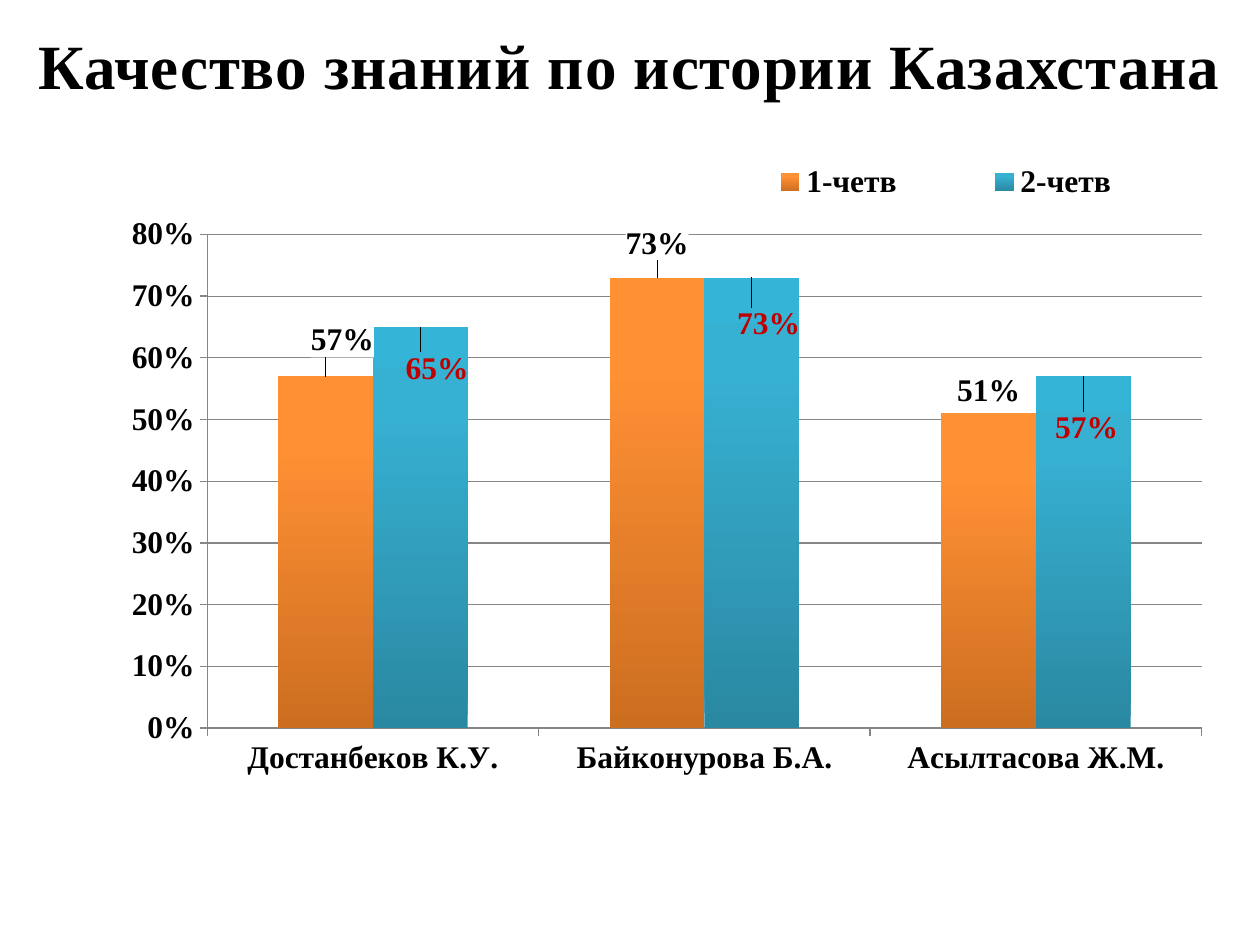
from lxml.etree import fromstring
from pptx import Presentation
from pptx.chart.data import CategoryChartData
from pptx.dml.color import RGBColor
from pptx.enum.chart import (XL_CHART_TYPE as ChartType, XL_LABEL_POSITION as LabelPos,
                             XL_LEGEND_POSITION as LegendPos, XL_TICK_MARK as Tick)
from pptx.enum.text import MSO_ANCHOR, MSO_AUTO_SIZE, PP_ALIGN
from pptx.oxml.ns import nsdecls, qn
from pptx.util import Inches, Pt

TITLE = "Качество знаний по истории Казахстана"
TEACHERS = ["Достанбеков К.У.", "Байконурова Б.А.", "Асылтасова Ж.М."]
# label_shifts: point index -> (x, y) shift as a share of the chart size
QUARTERS = [
    {"name": "1-четв", "values": [0.57, 0.73, 0.51], "label_color": "000000",
     "label_fill": "FFFFFF",
     "gradient": [(0, "CC6E20"), (80, "FF9034"), (100, "FF9136")],
     "label_shifts": {0: (0.015, -0.02), 1: (0, -0.017)}},
    {"name": "2-четв", "values": [0.65, 0.73, 0.57], "label_color": "C00000",
     "label_fill": None,
     "gradient": [(0, "2A88A2"), (80, "37B1D2"), (100, "34B4D6")],
     "label_shifts": {0: (0.015, 0.09), 1: (0.015, 0.097), 2: (0.003, 0.104)}},
]
PLOT_BOX = (0.097, 0.137, 0.886, 0.696)
LEGEND_BOX = (0.53, 0.023, 0.45, 0.08)
THEME = {"font": "Times New Roman", "text": "000000", "grid": "868686",
         "title_size": 36, "chart_size": 18}


def style_font(font, color=THEME["text"], size=THEME["chart_size"]):
    font.name = THEME["font"]
    font.size = Pt(size)
    font.bold = True
    font.color.rgb = RGBColor.from_string(color)


def layout_xml(x, y, w=None, h=None, inner=False):
    """Manual chart layout; without a size it is a shift of a label."""
    target = '<c:layoutTarget val="inner"/>' if inner else ""
    modes = size = ""
    if w is not None:
        modes = '<c:xMode val="edge"/><c:yMode val="edge"/>'
        size = f'<c:w val="{w}"/><c:h val="{h}"/>'
    return fromstring(
        f'<c:layout {nsdecls("c")}><c:manualLayout>{target}{modes}'
        f'<c:x val="{x}"/><c:y val="{y}"/>{size}</c:manualLayout></c:layout>')


def set_gradient(fill_format, stops):
    fill_format.gradient()
    fill_format.gradient_angle = 90
    stop_list = fill_format._fill._gradFill.find(qn("a:gsLst"))
    for old_stop in list(stop_list):
        stop_list.remove(old_stop)
    for percent, color in stops:
        stop_list.append(fromstring(
            f'<a:gs {nsdecls("a")} pos="{percent * 1000}">'
            f'<a:srgbClr val="{color}"/></a:gs>'))


def style_labels(series, quarter):
    labels = series.data_labels
    labels.show_value = True
    labels.number_format = "0%"
    labels.number_format_is_linked = False
    labels.position = LabelPos.OUTSIDE_END
    style_font(labels.font, quarter["label_color"])
    for index, shift in quarter["label_shifts"].items():
        label = series.points[index].data_label
        style_font(label.font, quarter["label_color"])
        label.position = LabelPos.OUTSIDE_END
        label_xml = label._dLbl
        label_xml.find(qn("c:idx")).addnext(layout_xml(*shift))
        if quarter["label_fill"]:
            for old_fill in label_xml.findall(qn("c:spPr")):
                label_xml.remove(old_fill)
            label_xml.find(qn("c:txPr")).addprevious(fromstring(
                f'<c:spPr {nsdecls("c", "a")}><a:solidFill>'
                f'<a:srgbClr val="{quarter["label_fill"]}"/></a:solidFill></c:spPr>'))


def add_title(slide):
    title = slide.shapes.title
    title.left, title.top = Inches(0.16), Inches(0.16)
    title.width, title.height = Inches(9.68), Inches(0.71)
    frame = title.text_frame
    frame.text = TITLE
    frame.word_wrap = False
    frame.auto_size = MSO_AUTO_SIZE.SHAPE_TO_FIT_TEXT
    frame.vertical_anchor = MSO_ANCHOR.TOP
    paragraph = frame.paragraphs[0]
    paragraph.alignment = PP_ALIGN.CENTER
    run = paragraph.runs[0]
    style_font(run.font, size=THEME["title_size"])
    run.font._element.set("spc", "50")


def add_quality_chart(slide):
    data = CategoryChartData(number_format="0%")
    data.categories = TEACHERS
    for quarter in QUARTERS:
        data.add_series(quarter["name"], quarter["values"])
    chart = slide.shapes.add_chart(
        ChartType.COLUMN_CLUSTERED, Inches(0.78), Inches(1.09),
        Inches(8.91), Inches(5.63), data).chart
    chart.has_title = False
    style_font(chart.font)

    plot = chart.plots[0]
    plot.gap_width = 150
    plot.overlap = 0
    plot.vary_by_categories = False
    for series, quarter in zip(plot.series, QUARTERS):
        set_gradient(series.format.fill, quarter["gradient"])
        style_labels(series, quarter)

    grid_color = RGBColor.from_string(THEME["grid"])
    values = chart.value_axis
    values.minimum_scale, values.maximum_scale, values.major_unit = 0, 0.8, 0.1
    values.has_major_gridlines = True
    values.tick_labels.number_format = "0%"
    values.tick_labels.number_format_is_linked = False
    for axis in (values, chart.category_axis):
        axis.major_tick_mark = Tick.OUTSIDE
        style_font(axis.tick_labels.font)
    for line in (values.major_gridlines.format.line, values.format.line,
                 chart.category_axis.format.line):
        line.color.rgb = grid_color
        line.width = Pt(0.75)

    chart.has_legend = True
    legend = chart.legend
    legend.position = LegendPos.RIGHT
    legend.include_in_layout = False
    style_font(legend.font)
    for part, box, inner in ((legend._element, LEGEND_BOX, False),
                             (chart._chartSpace.chart.plotArea, PLOT_BOX, True)):
        for old_layout in part.findall(qn("c:layout")):
            part.remove(old_layout)
        position = part.find(qn("c:legendPos"))
        if position is None:
            part.insert(0, layout_xml(*box, inner=inner))
        else:
            position.addnext(layout_xml(*box, inner=inner))


def main():
    deck = Presentation()
    deck.slide_width, deck.slide_height = Inches(10), Inches(7.5)
    slide = deck.slides.add_slide(deck.slide_layouts[5])
    add_quality_chart(slide)
    add_title(slide)
    deck.save("out.pptx")


if __name__ == "__main__":
    main()
